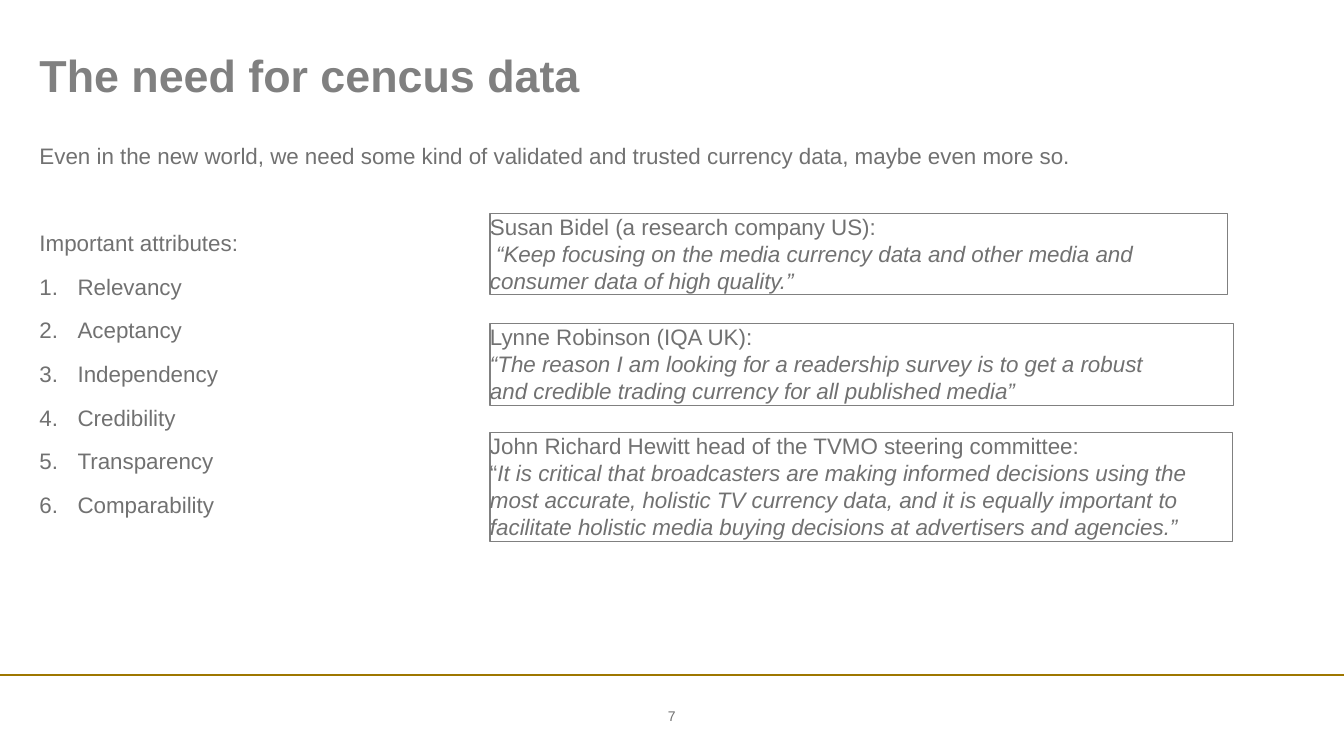
from dataclasses import dataclass

from lxml import etree
from pptx import Presentation
from pptx.dml.color import RGBColor
from pptx.enum.shapes import MSO_CONNECTOR, MSO_SHAPE
from pptx.enum.text import MSO_ANCHOR, MSO_AUTO_SIZE, PP_ALIGN
from pptx.oxml.ns import qn
from pptx.slide import Slide
from pptx.text.text import TextFrame, _Paragraph, _Run
from pptx.util import Pt

RECT = MSO_SHAPE.RECTANGLE
STRAIGHT = MSO_CONNECTOR.STRAIGHT
LEFT, CENTER = PP_ALIGN.LEFT, PP_ALIGN.CENTER
TOP, MIDDLE = MSO_ANCHOR.TOP, MSO_ANCHOR.MIDDLE
NO_FIT = MSO_AUTO_SIZE.NONE

TEXT = RGBColor(0x71, 0x71, 0x71)
GREY = RGBColor(0x80, 0x80, 0x80)
GOLD = RGBColor(0x9E, 0x77, 0x00)
FONT = "Arial"
WIDE, HIGH = 960, 540
EDGE, SPAN = 28.2, 903
INDENT = 27.2


@dataclass
class Quote:
    top: float
    width: float
    height: float
    source: str
    lead: str
    lines: list[str]


QUOTES = [
    Quote(152.2, 526.6, 58.2, "Susan Bidel (a research company US):", " ",
          ["“Keep focusing on the media currency data and other media and",
           "consumer data of high quality.”"]),
    Quote(231, 531, 58.4, "Lynne Robinson (IQA UK):", "",
          ["“The reason I am looking for a readership survey is to get a robust",
           "and credible trading currency for all published media”"]),
    Quote(309, 530.4, 77.5,
          "John Richard Hewitt head of the TVMO steering committee:", "“",
          ["It is critical that broadcasters are making informed decisions "
           "using the most accurate, holistic TV currency data, and it is "
           "equally important to facilitate holistic media buying decisions "
           "at advertisers and agencies.”"]),
]
INTRO = ("Even in the new world, we need some kind of validated and trusted "
         "currency data, maybe even more so.")
HEAD = "Important attributes:"
TRAITS = ["Relevancy", "Aceptancy", "Independency", "Credibility",
          "Transparency", "Comparability"]


def style(run: _Run, size: float = 16, color: RGBColor = TEXT,
          bold: bool = False, italic: bool = False) -> None:
    font = run.font
    font.name, font.size = FONT, Pt(size)
    font.bold, font.italic = bold, italic
    font.color.rgb = color


def setup(frame: TextFrame, anchor: MSO_ANCHOR = TOP) -> None:
    frame.margin_left = frame.margin_right = 0
    frame.margin_top = frame.margin_bottom = 0
    frame.word_wrap = True
    frame.auto_size = NO_FIT
    frame.vertical_anchor = anchor


def place(shape, left: float, top: float, width: float, height: float) -> None:
    shape.left, shape.top = Pt(left), Pt(top)
    shape.width, shape.height = Pt(width), Pt(height)


def mark(para: _Paragraph, listed: bool) -> None:
    props = para._p.get_or_add_pPr()
    indent = Pt(INDENT) if listed else 0
    props.set("marL", str(indent))
    props.set("indent", str(-indent))
    if listed:
        etree.SubElement(props, qn("a:buFont"), typeface="+mj-lt")
        etree.SubElement(props, qn("a:buAutoNum"), type="arabicPeriod")
    else:
        etree.SubElement(props, qn("a:buNone"))


def add_quote(slide: Slide, quote: Quote) -> None:
    box = slide.shapes.add_shape(RECT, Pt(350), Pt(quote.top),
                                 Pt(quote.width), Pt(quote.height))
    box.shadow.inherit = False
    box.fill.background()
    box.line.color.rgb, box.line.width = GREY, Pt(0.75)
    frame = box.text_frame
    setup(frame)
    frame.text = "\n".join([quote.source, quote.lead, *quote.lines[1:]])
    for para in frame.paragraphs:
        para.alignment = LEFT
    source, first, *rest = frame.paragraphs
    for run in source.runs + first.runs:
        style(run)
    run = first.add_run()
    run.text = quote.lines[0]
    style(run, italic=True)
    for para in rest:
        style(para.runs[0], italic=True)


def main() -> None:
    deck = Presentation()
    deck.slide_width, deck.slide_height = Pt(WIDE), Pt(HIGH)
    slide = deck.slides.add_slide(deck.slide_layouts[1])

    # Title
    title = slide.shapes.title
    place(title, EDGE, 34, SPAN, 55.4)
    setup(title.text_frame)
    title.text_frame.text = "The need for cencus data"
    para = title.text_frame.paragraphs[0]
    para.alignment = LEFT
    style(para.runs[0], 32, GREY, bold=True)

    # Intro and numbered attributes
    body = slide.placeholders[1]
    place(body, EDGE, 101.6, SPAN, 316)
    setup(body.text_frame)
    body.text_frame.text = "\n".join([INTRO, HEAD, *TRAITS])
    for i, para in enumerate(body.text_frame.paragraphs):
        para.space_before = Pt({0: 0, 1: 43}.get(i, 12))
        mark(para, i > 1)
        style(para.runs[0])

    # Quotes
    for quote in QUOTES:
        add_quote(slide, quote)

    # Footer rule and page number
    rule = slide.shapes.add_connector(STRAIGHT, 0, Pt(482.2),
                                      Pt(WIDE), Pt(482.2))
    rule.line.color.rgb, rule.line.width = GOLD, Pt(1.5)
    etree.SubElement(rule._element.spPr, qn("a:effectLst"))
    page = slide.shapes.add_textbox(Pt(441.6), Pt(503.5), Pt(76.4), Pt(16))
    setup(page.text_frame, MIDDLE)
    page.text_frame.text = "7"
    para = page.text_frame.paragraphs[0]
    para.alignment = CENTER
    style(para.runs[0], 10)

    deck.save("out.pptx")


if __name__ == "__main__":
    main()
